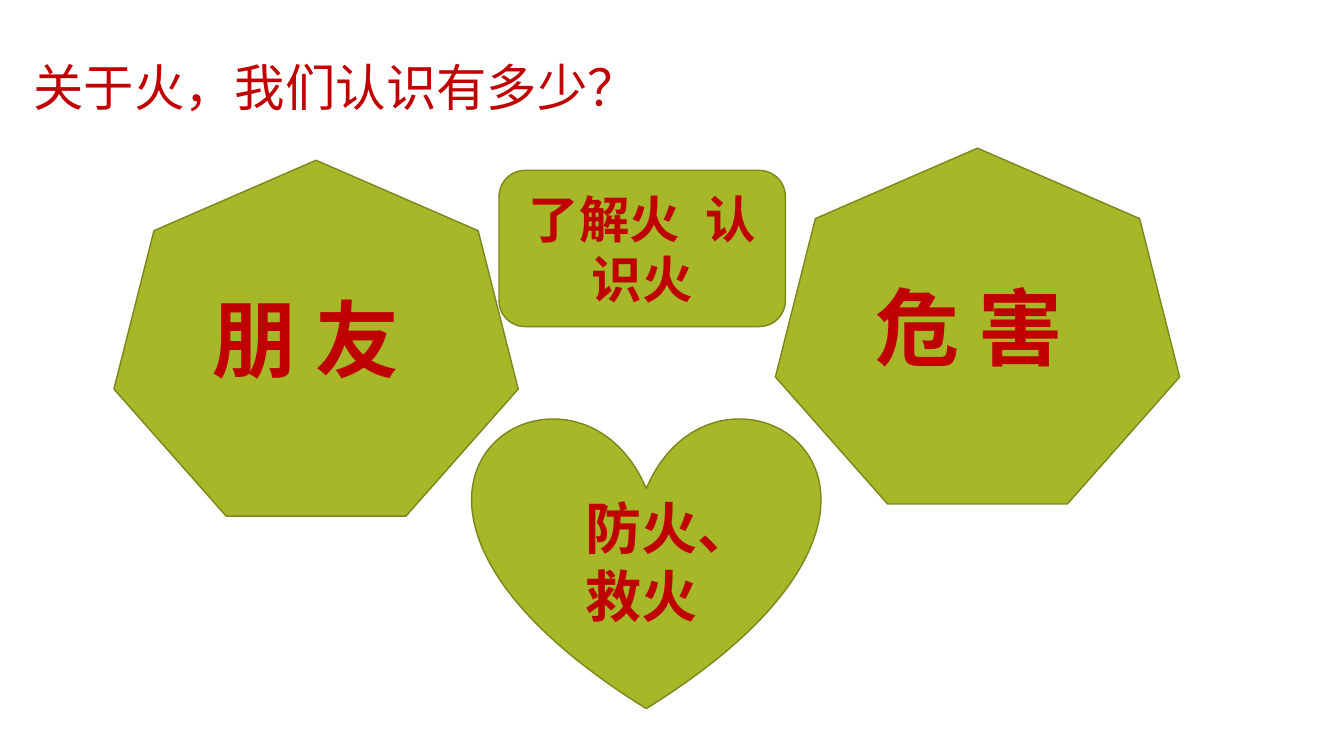
from dataclasses import dataclass

import pptx
import pptx.dml.color
import pptx.enum.shapes
import pptx.enum.text
import pptx.oxml
import pptx.oxml.ns
import pptx.util

Inches = pptx.util.Inches
Pt = pptx.util.Pt
Color = pptx.dml.color.RGBColor
Kind = pptx.enum.shapes.MSO_SHAPE
Align = pptx.enum.text.PP_ALIGN
Anchor = pptx.enum.text.MSO_ANCHOR
Fit = pptx.enum.text.MSO_AUTO_SIZE

RED = Color(0xC0, 0x00, 0x00)
GREEN = Color(0xA6, 0xB7, 0x27)
OLIVE = Color(0x7B, 0x87, 0x1D)
SANS = "Noto Sans CJK JP"


@dataclass
class Box:
    left: float
    top: float
    width: float
    height: float

    def place(self) -> tuple:
        return tuple(Inches(v) for v in (self.left, self.top, self.width, self.height))


@dataclass
class Form:
    kind: Kind
    box: Box


@dataclass
class Label:
    lines: list[str]
    box: Box
    size: int


FORMS = [
    Form(Kind.HEPTAGON, Box(1.13, 1.59, 4.01, 3.53)),
    Form(Kind.HEPTAGON, Box(7.69, 1.47, 4.01, 3.53)),
    Form(Kind.HEART, Box(4.69, 4.12, 3.44, 2.91)),
]
LABELS = [
    Label(["朋 友"], Box(2.01, 2.8, 2.48, 1.11), 60),
    Label(["危 害"], Box(8.58, 2.68, 2.48, 1.11), 60),
    Label(["防火、", "救火"], Box(5.71, 4.85, 1.84, 1.45), 40),
]
CENTER = Form(Kind.ROUNDED_RECTANGLE, Box(4.95, 1.69, 2.84, 1.55))


def write(frame, lines: list[str], *, size: int, font: str = SANS, bold: bool = True,
          align: Align = Align.LEFT, anchor: Anchor = Anchor.TOP,
          space: float = 1.0) -> None:
    """Fill a text frame, one paragraph a line."""
    frame.word_wrap = True
    frame.auto_size = Fit.NONE
    frame.vertical_anchor = anchor
    for i, line in enumerate(lines):
        para = frame.paragraphs[0] if i == 0 else frame.add_paragraph()
        para.alignment = align
        para.line_spacing = space
        para.space_before = Pt(0)
        run = para.add_run()
        run.text = line
        run.font.size = Pt(size)
        run.font.bold = bold
        run.font.color.rgb = RED
        run.font.name = font
        # East Asian glyphs take their own typeface
        east = pptx.oxml.parse_xml(
            f'<a:ea {pptx.oxml.ns.nsdecls("a")} typeface="{font}"/>')
        run.font._element.find(pptx.oxml.ns.qn("a:latin")).addnext(east)


def draw(slide, form: Form):
    shape = slide.shapes.add_shape(form.kind, *form.box.place())
    shape.shadow.inherit = False
    shape.fill.solid()
    shape.fill.fore_color.rgb = GREEN
    shape.line.color.rgb = OLIVE
    shape.line.width = Pt(1)
    return shape


def main() -> None:
    deck = pptx.Presentation()
    deck.slide_width = Inches(13.33)
    deck.slide_height = Inches(7.5)
    slide = deck.slides.add_slide(deck.slide_layouts[5])

    # Title
    title = slide.shapes.title
    title.left, title.top, title.width, title.height = Box(0.23, -0.09, 10.72, 1.31).place()
    write(title.text_frame, ["关于火，我们认识有多少？"], size=36,
          font="Noto Sans CJK SC", bold=False, anchor=Anchor.BOTTOM, space=0.9)

    # Heptagons and heart, each with its label
    for form, label in zip(FORMS, LABELS):
        draw(slide, form)
        text = slide.shapes.add_textbox(*label.box.place())
        write(text.text_frame, label.lines, size=label.size)

    # Central topic
    write(draw(slide, CENTER).text_frame, ["了解火  认识火"], size=36,
          font="Roboto", align=Align.CENTER, anchor=Anchor.MIDDLE)

    deck.save("out.pptx")


if __name__ == "__main__":
    main()
